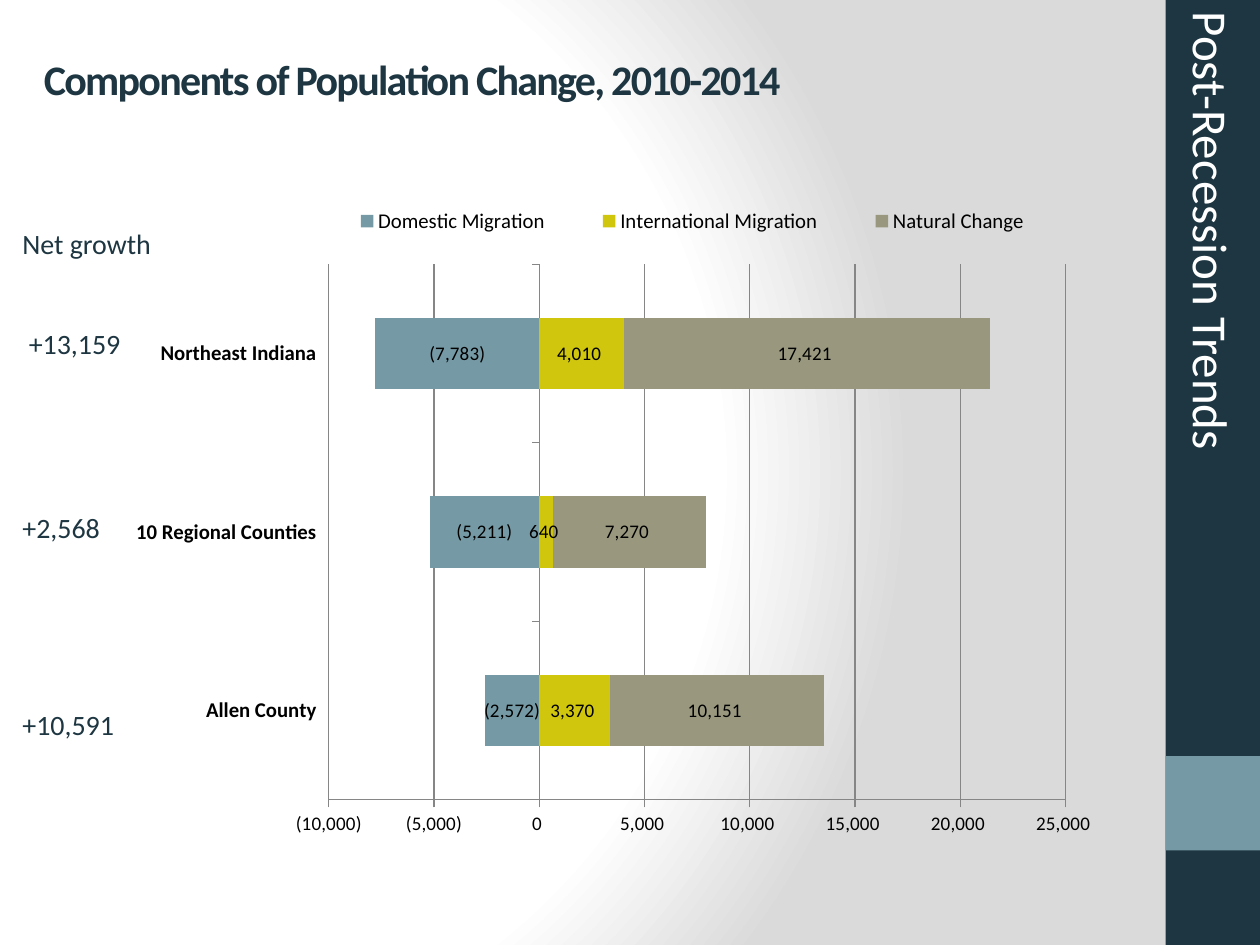
from pptx import Presentation
from pptx.chart.data import CategoryChartData
from pptx.dml.color import RGBColor
from pptx.enum.chart import XL_CHART_TYPE, XL_LEGEND_POSITION, XL_TICK_LABEL_POSITION, XL_TICK_MARK
from pptx.enum.shapes import MSO_SHAPE
from pptx.enum.text import MSO_ANCHOR
from pptx.oxml import parse_xml
from pptx.oxml.ns import nsdecls
from pptx.util import Inches, Pt

RECT = MSO_SHAPE.RECTANGLE
MIDDLE, TOP = MSO_ANCHOR.MIDDLE, MSO_ANCHOR.TOP
BAR_STACKED = XL_CHART_TYPE.BAR_STACKED
LEGEND_RIGHT = XL_LEGEND_POSITION.RIGHT
LOW = XL_TICK_LABEL_POSITION.LOW
OUTSIDE, NO_TICK = XL_TICK_MARK.OUTSIDE, XL_TICK_MARK.NONE

FONT = "Calibri"
NAVY, TEAL, LIME, OLIVE = "1D3641", "759AA5", "CFC60D", "99987F"
WHITE, BLACK, GRID = "FFFFFF", "000000", "868686"
NUMBER = r"#,##0_);\(#,##0\)"

CATEGORIES = ["Allen County", "10 Regional Counties", "Northeast Indiana"]
SERIES = [
    ("Domestic Migration", TEAL, (-2572, -5211, -7783)),
    ("International Migration", LIME, (3370, 640, 4010)),
    ("Natural Change", OLIVE, (10151, 7270, 17421)),
]
NET_GROWTH = [("Net growth", 0, 0), ("+13,159", 38, 0.05), ("+2,568", 86, 0), ("+10,591", 93, 0)]


def color(value):
    return RGBColor.from_string(value)


def set_font(font, size, value=BLACK, bold=False):
    font.name, font.size, font.bold = FONT, Pt(size), bold
    font.color.rgb = color(value)


def add_text(p, text, size=16, value=NAVY, bold=False, spacing=0, before=0, indent=0):
    p.space_before = Pt(before)
    if indent:
        p._p.get_or_add_pPr().set("marL", str(Inches(indent)))
    r = p.add_run()
    r.text = text
    set_font(r.font, size, value, bold)
    if spacing:
        r.font._element.set("spc", str(spacing * 100))


def manual_layout(x, y, w, h, inner=False):
    target = '<c:layoutTarget val="inner"/>' if inner else ""
    return parse_xml(
        f'<c:layout {nsdecls("c")}><c:manualLayout>{target}'
        '<c:xMode val="edge"/><c:yMode val="edge"/>'
        f'<c:x val="{x}"/><c:y val="{y}"/><c:w val="{w}"/><c:h val="{h}"/>'
        '</c:manualLayout></c:layout>')


def replace_layout(parent, layout, index):
    for old in parent.findall(layout.tag):
        parent.remove(old)
    parent.insert(index, layout)


class Deck:
    """Holds the presentation style and the current slide."""

    def __init__(self):
        self.prs = Presentation()
        self.prs.slide_width, self.prs.slide_height = Inches(10), Inches(7.5)
        self.s = self.prs.slides.add_slide(self.prs.slide_layouts[6])

    def background(self, stops):
        gs = "".join(f'<a:gs pos="{pos * 1000}"><a:srgbClr val="{c}"/></a:gs>' for pos, c in stops)
        self.s.element.cSld.insert(0, parse_xml(
            f'<p:bg {nsdecls("p", "a")}><p:bgPr><a:gradFill rotWithShape="1"><a:gsLst>{gs}</a:gsLst>'
            '<a:path path="circle"><a:fillToRect l="20000" t="50000" r="100000" b="50000"/></a:path>'
            '</a:gradFill><a:effectLst/></p:bgPr></p:bg>'))

    def rect(self, x, y, w, h, fill):
        sp = self.s.shapes.add_shape(RECT, Inches(x), Inches(y), Inches(w), Inches(h))
        sp.shadow.inherit = False
        sp.fill.solid()
        sp.fill.fore_color.rgb = color(fill)
        sp.line.fill.background()

    def text(self, x, y, w, h, paragraphs, anchor=TOP, rotation=0):
        sp = self.s.shapes.add_textbox(Inches(x), Inches(y), Inches(w), Inches(h))
        sp.rotation = rotation
        tf = sp.text_frame
        tf.word_wrap, tf.vertical_anchor = True, anchor
        for i, (text, style) in enumerate(paragraphs):
            add_text(tf.add_paragraph() if i else tf.paragraphs[0], text, **style)

    def chart(self, x, y, w, h):
        data = CategoryChartData()
        data.categories = CATEGORIES
        for name, _, values in SERIES:
            data.add_series(name, values)
        chart = self.s.shapes.add_chart(
            BAR_STACKED, Inches(x), Inches(y), Inches(w), Inches(h), data).chart
        set_font(chart.font, 11)
        chart.has_title = False
        plot = chart.plots[0]
        plot.gap_width, plot.overlap, plot.vary_by_categories = 150, 100, False
        for series, (_, fill, _) in zip(plot.series, SERIES):
            series.invert_if_negative = False
            series.format.fill.solid()
            series.format.fill.fore_color.rgb = color(fill)
            labels = series.data_labels
            labels.show_value = True
            labels.number_format, labels.number_format_is_linked = NUMBER, False
            set_font(labels.font, 11)
        self.axes(chart.category_axis, chart.value_axis)
        chart.has_legend = True
        legend = chart.legend
        legend.position, legend.include_in_layout = LEGEND_RIGHT, False
        set_font(legend.font, 12)
        replace_layout(legend._element, manual_layout(0.17, 0.03, 0.8, 0.06), 1)
        replace_layout(plot._element.getparent(), manual_layout(0.19, 0.118, 0.77, 0.718, True), 0)

    def axes(self, cat, val):
        cat.tick_label_position = LOW
        val.minimum_scale, val.maximum_scale, val.major_unit = -10000, 25000, 5000
        val.has_major_gridlines = True
        tick_labels = val.tick_labels
        tick_labels.number_format, tick_labels.number_format_is_linked = NUMBER, False
        for axis, size, bold in ((cat, 12, True), (val, 11, False)):
            axis.major_tick_mark, axis.minor_tick_mark = OUTSIDE, NO_TICK
            set_font(axis.tick_labels.font, size, bold=bold)
        for line in (cat.format.line, val.format.line, val.major_gridlines.format.line):
            line.color.rgb = color(GRID)
            line.width = Pt(0.75)


def main():
    deck = Deck()
    deck.background([(0, WHITE), (75, WHITE), (100, "DADADA")])
    deck.rect(9.25, 0, 0.75, 7.5, NAVY)
    deck.rect(9.25, 6, 0.75, 0.75, TEAL)
    deck.text(0.25, 0, 8.33, 1.25, [
        ("Components of Population Change, 2010-2014", dict(size=24, bold=True, spacing=-1))],
        anchor=MIDDLE)
    deck.text(0.08, 1.75, 1.48, 4.81, [
        (text, dict(before=before, indent=indent)) for text, before, indent in NET_GROWTH])
    deck.text(6.66, 2.67, 5.92, 0.57, [
        ("Post-Recession Trends", dict(size=28, value=WHITE))], rotation=90)
    deck.chart(1.08, 1.4, 7.68, 5.92)
    deck.prs.save("out.pptx")


if __name__ == "__main__":
    main()
